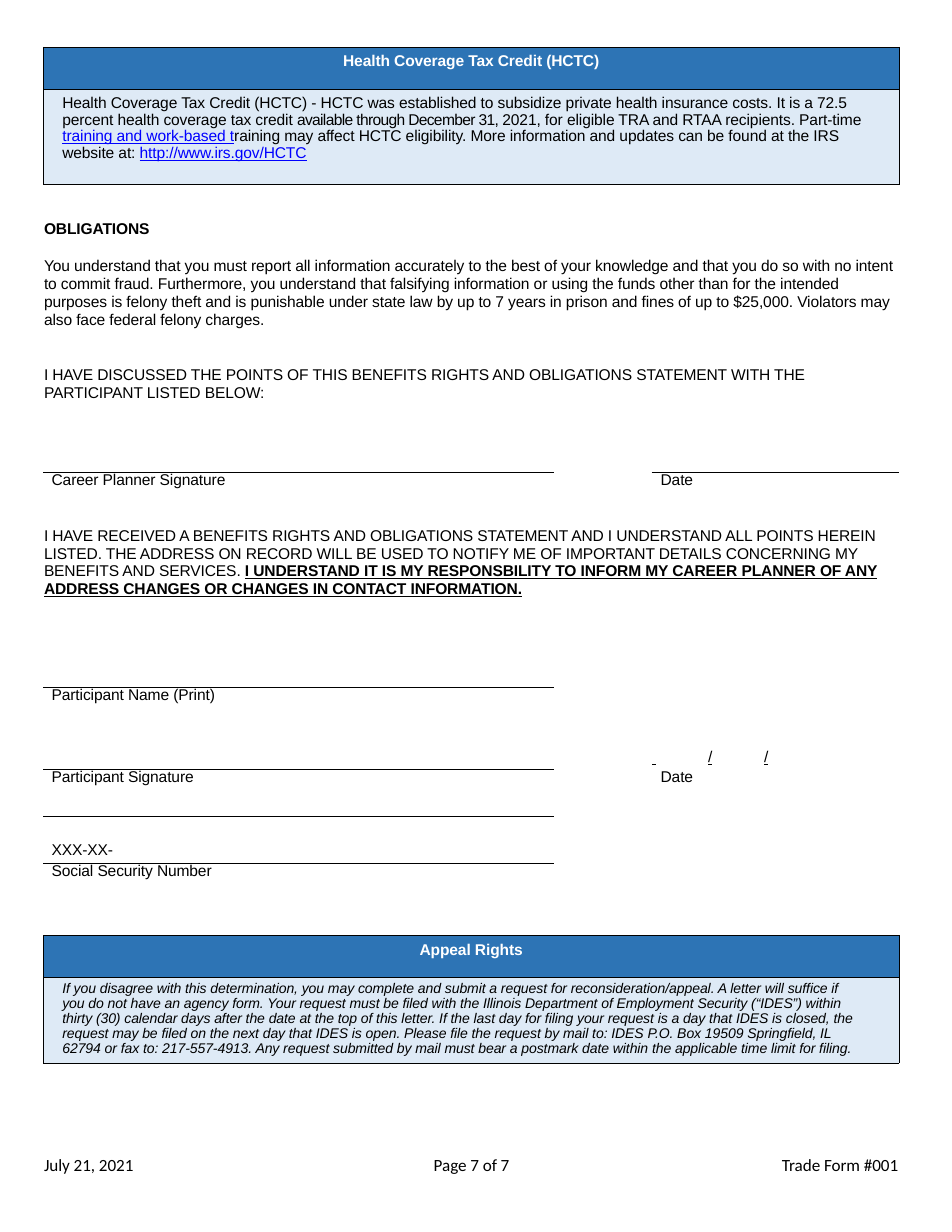
from lxml import etree
from pptx import Presentation
from pptx.dml.color import RGBColor
from pptx.enum.text import PP_ALIGN
from pptx.oxml.ns import qn
from pptx.util import Pt

LEFT, CENTER = PP_ALIGN.LEFT, PP_ALIGN.CENTER
BLACK, WHITE, BLUE, PALE, LINK = "000000", "FFFFFF", "2D74B5", "DEEAF6", "0000FF"
ALL_SIDES = "LRTB"


def color(value):
    return RGBColor.from_string(value)


def write(p, text, font="Arial", size=10, fill=BLACK, bold=False, italic=False,
          underline=False, spacing=-0.05):
    r = p.add_run()
    r.text = text
    f = r.font
    f.name, f.size, f.bold, f.italic, f.underline = font, Pt(size), bold, italic, underline
    f.color.rgb = color(fill)
    r._r.get_or_add_rPr().set("spc", str(round(spacing * 100)))


def layout(p, align=LEFT, indent=0, line=None, before=0, tabs=()):
    """Set paragraph format; line is a multiple as float or a Pt length."""
    p.alignment = align
    p.line_spacing = line
    p.space_before = Pt(before)
    pPr = p._p.get_or_add_pPr()
    pPr.set("marL", str(Pt(indent)))
    pPr.set("indent", "0")
    if tabs:
        stops = etree.SubElement(pPr, qn("a:tabLst"))
        for pos in tabs:
            etree.SubElement(stops, qn("a:tab"), pos=str(Pt(pos)), algn="l")


def set_borders(cell, sides):
    tcPr = cell._tc.get_or_add_tcPr()
    for side in ALL_SIDES:
        ln = etree.SubElement(tcPr, qn("a:ln" + side), w=str(Pt(0.5)))
        if side in sides:
            solid = etree.SubElement(ln, qn("a:solidFill"))
            etree.SubElement(solid, qn("a:srgbClr"), val=BLACK)
        else:
            etree.SubElement(ln, qn("a:noFill"))


class Page:
    """Holds the slide and the form's common style."""
    left = 27.9
    width = 550
    line = Pt(11.5)

    def __init__(self, s):
        self.s = s

    def text(self, x, y, w, h, paragraphs, wrap=True):
        """Each paragraph is (runs, layout); each run is (text, format)."""
        tf = self.s.shapes.add_textbox(Pt(x), Pt(y), Pt(w), Pt(h)).text_frame
        tf.word_wrap = wrap
        tf.margin_left = tf.margin_right = tf.margin_top = tf.margin_bottom = 0
        for i, (runs, form) in enumerate(paragraphs):
            p = tf.add_paragraph() if i else tf.paragraphs[0]
            layout(p, **{"line": self.line, "indent": 0.9, **form})
            for text, fmt in runs:
                write(p, text, **fmt)

    def table(self, y, widths, heights, cells):
        """Each cell is a dict: runs, form, borders, fill, top, right."""
        frame = self.s.shapes.add_table(len(heights), len(widths), Pt(self.left), Pt(y),
                                        Pt(sum(widths)), Pt(sum(heights)))
        table = frame.table
        table.first_row = table.horz_banding = False
        for col, w in zip(table.columns, widths):
            col.width = Pt(w)
        for row, h, row_cells in zip(table.rows, heights, cells):
            row.height = Pt(h)
            for cell, data in zip(row.cells, row_cells):
                self.cell(cell, **data)

    def cell(self, cell, runs=(), form=None, borders="", fill=None, top=0, right=0):
        cell.margin_left = cell.margin_bottom = 0
        cell.margin_top, cell.margin_right = Pt(top), Pt(right)
        set_borders(cell, borders)
        if fill:
            cell.fill.solid()
            cell.fill.fore_color.rgb = color(fill)
        else:
            cell.fill.background()
        p = cell.text_frame.paragraphs[0]
        layout(p, **{"line": Pt(10.7), **(form or {})})
        for text, fmt in runs:
            write(p, text, **fmt)

    def panel(self, y, title, body_height, runs, top, before):
        """Blue heading row above a pale body row."""
        head = dict(runs=[(title, dict(bold=True, fill=WHITE))], fill=BLUE, top=3.6,
                    borders=ALL_SIDES, form=dict(align=CENTER, before=3.4, line=1.0))
        body = dict(runs=runs, fill=PALE, top=top, right=23, borders=ALL_SIDES,
                    form=dict(indent=12.2, line=0.96, before=before))
        self.table(y, [self.width], [27.2, body_height], [[head], [body]])


def label(text, borders="", indent=5.3, top=0):
    return dict(runs=[(text, {})], borders=borders, top=top, form=dict(indent=indent))


def main():
    prs = Presentation()
    prs.slide_width, prs.slide_height = Pt(612), Pt(792)
    page = Page(prs.slides.add_slide(prs.slide_layouts[6]))

    for x, w, text in ((27.4, 60, "July 21, 2021"), (277.9, 51, "Page 7 of 7"),
                       (501.8, 79, "Trade Form #001")):
        page.text(x, 743.8, w, 13, [([(text, dict(font="Calibri", size=11))], {})], wrap=False)

    link = dict(fill=LINK, underline=True)
    page.panel(30.4, "Health Coverage Tax Credit (HCTC)", 61.2, [
        ("Health Coverage Tax Credit (HCTC) - HCTC was established to subsidize private health "
         "insurance costs. It is a 72.5 percent health coverage tax credit ", {}),
        ("available through December 31, ", dict(spacing=-0.4)),
        ("2021, for eligible TRA and RTAA recipients. Part-time ", {}),
        ("training and work-based t", link),
        ("raining may affect HCTC eligibility. More information and updates can be found at "
         "the IRS website at: ", {}),
        ("http://www.irs.gov/HCTC", link),
    ], top=3.6, before=3.4)

    page.text(27.4, 141.1, 548, 117, [
        ([("OBLIGATIONS", dict(bold=True))], dict(before=0.9)),
        ([("You understand that you must report all information accurately to the best of your "
           "knowledge and that you do so with no intent to commit fraud. Furthermore, you "
           "understand that falsifying information or using the funds other than for the "
           "intended purposes is felony theft and is punishable under state law by up to 7 "
           "years in prison and fines of up to $25,000. Violators may also face federal felony "
           "charges.", {})], dict(before=12.5)),
        ([("I HAVE DISCUSSED THE POINTS OF THIS BENEFITS RIGHTS AND OBLIGATIONS STATEMENT WITH "
           "THE PARTICIPANT LISTED BELOW:", {})], dict(before=24)),
    ])

    page.table(303.4, [328, 63, 159], [11.5],
               [[label("Career Planner Signature", "T"), {}, label("Date", "T", 5.8)]])

    page.text(27.4, 338.4, 548, 48, [([
        ("I HAVE RECEIVED A BENEFITS RIGHTS AND OBLIGATIONS STATEMENT AND I UNDERSTAND ALL "
         "POINTS HEREIN LISTED. THE ADDRESS ON RECORD WILL BE USED TO NOTIFY ME OF IMPORTANT "
         "DETAILS CONCERNING MY BENEFITS AND SERVICES. ", {}),
        ("I UNDERSTAND IT IS MY RESPONSBILITY TO INFORM MY CAREER PLANNER OF ANY ADDRESS "
         "CHANGES OR CHANGES IN CONTACT INFORMATION.", dict(bold=True, underline=True)),
    ], dict(before=1.8))])

    date_blank = dict(runs=[(" \t/\t/\t", dict(underline=True))], top=13,
                      form=dict(indent=63.4, tabs=(98.6, 132.5, 220.3)))
    page.table(441.8, [328, 221], [26.9, 25.9, 30.2, 30.2, 11.5], [
        [label("Participant Name (Print)", "T"), {}],
        [dict(borders="B"), date_blank],
        [label("Participant Signature", "TB"), label("Date", indent=68.8)],
        [label("XXX-XX-", "TB", top=17), {}],
        [label("Social Security Number", "T"), {}],
    ])

    page.panel(601.4, "Appeal Rights", 54.7, [
        ("If you disagree with this determination, you may complete and submit a request for "
         "reconsideration/appeal. A letter will suffice if you do not have an agency form. Your "
         "request must be filed with the Illinois Department of Employment Security (“IDES”) "
         "within thirty (30) calendar days after the date at the top of this letter. If the last "
         "day for filing your request is a day that IDES is closed, the request may be filed on "
         "the next day that IDES is open. Please file the request by mail to: IDES P.O. Box "
         "19509 Springfield, IL 62794 or fax to: 217-557-4913. Any request submitted by mail "
         "must bear a postmark date within the applicable time limit for filing.",
         dict(size=9, italic=True)),
    ], top=2.2, before=2.3)

    prs.save("out.pptx")


if __name__ == "__main__":
    main()
